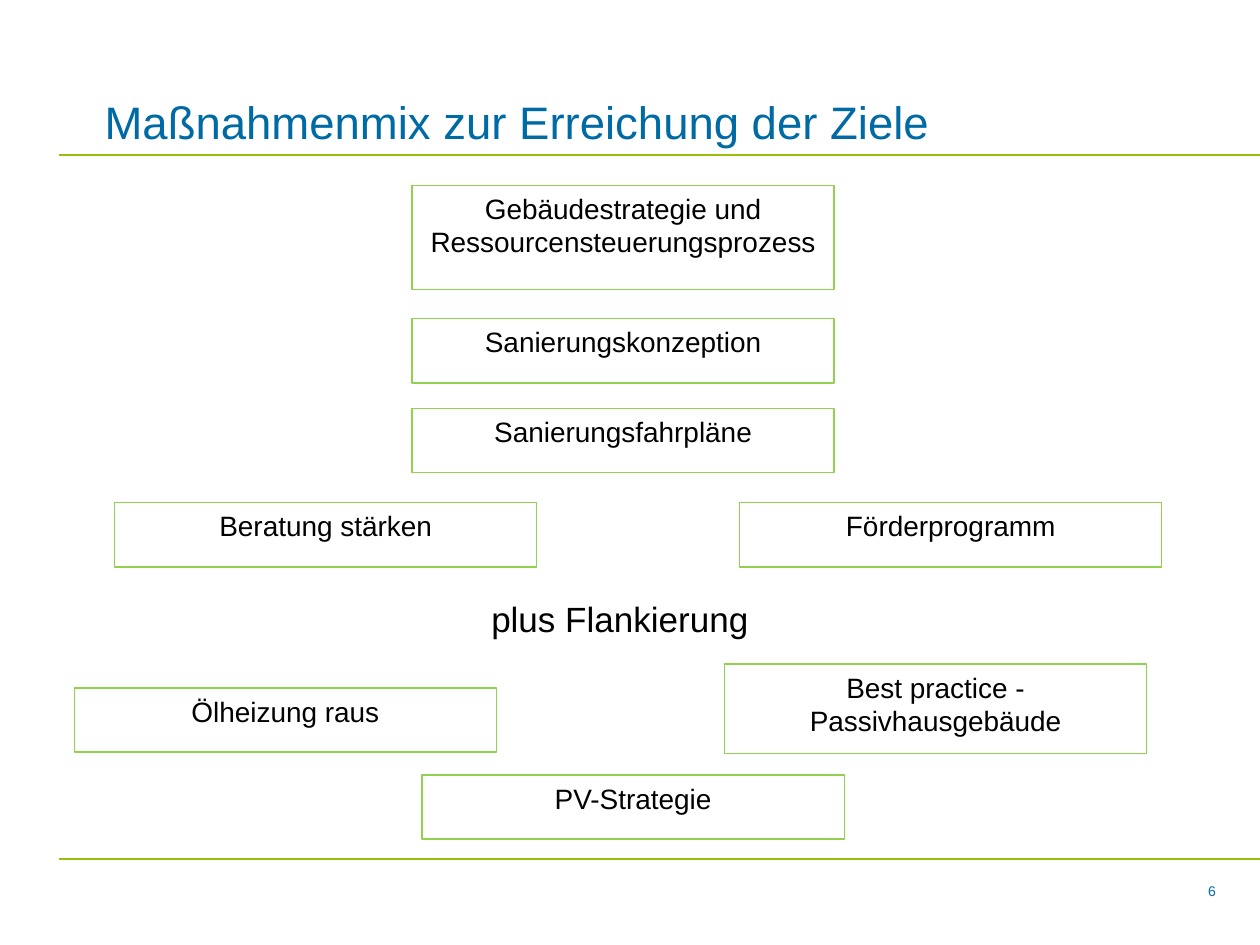
from dataclasses import dataclass

from lxml.etree import SubElement
from pptx import Presentation
from pptx.dml.color import RGBColor
from pptx.enum.shapes import MSO_CONNECTOR, MSO_SHAPE
from pptx.enum.text import MSO_ANCHOR, PP_ALIGN
from pptx.oxml.ns import qn
from pptx.shapes.base import BaseShape
from pptx.slide import Slide
from pptx.util import Inches, Pt

BLUE, GREEN, LIGHT_GREEN, BLACK = "006AA4", "97BF0D", "92D050", "000000"
SLIDE_WIDTH = 10
BOX_WIDTH, BOX_HEIGHT = 3.35, 0.51
CENTER_LEFT = 3.27


@dataclass
class Measure:
    text: str
    left: float
    top: float
    height: float = BOX_HEIGHT


@dataclass
class Label:
    text: str
    left: float
    top: float
    width: float
    height: float
    size: float
    color: str
    alignment: PP_ALIGN
    frame_format: dict
    paragraph_format: dict


BOTTOM_FRAME = {
    "vertical_anchor": MSO_ANCHOR.BOTTOM,
    "margin_left": 0,
    "margin_right": 0,
    "margin_top": 0,
    "margin_bottom": 0,
}

MEASURES = [
    Measure("Gebäudestrategie und Ressourcensteuerungsprozess", CENTER_LEFT, 1.47, 0.83),
    Measure("Sanierungskonzeption", CENTER_LEFT, 2.53),
    Measure("Sanierungsfahrpläne", CENTER_LEFT, 3.24),
    Measure("Beratung stärken", 0.91, 3.99),
    Measure("Förderprogramm", 5.87, 3.99),
    Measure("Ölheizung raus", 0.59, 5.46),
    Measure("Best practice - Passivhausgebäude", 5.75, 5.27, 0.71),
    Measure("PV-Strategie", 3.35, 6.15),
]

LABELS = [
    Label("6", 8.94, 6.98, 0.71, 0.16, 8, BLUE, PP_ALIGN.RIGHT,
          BOTTOM_FRAME, {"line_spacing": Pt(12)}),
    Label("Maßnahmenmix zur Erreichung der Ziele", 0.83, 0.31, 8.82, 0.87, 26, BLUE,
          PP_ALIGN.LEFT, BOTTOM_FRAME, {}),
    Label("plus Flankierung", 3.54, 4.69, 2.76, 0.47, 20, BLACK, PP_ALIGN.CENTER, {}, {}),
]


def color_from(value: str) -> RGBColor:
    return RGBColor.from_string(value)


def apply_format(target: object, values: dict) -> None:
    for name, value in values.items():
        setattr(target, name, value)


def write_text(shape: BaseShape, text: str, size: float, color: str, alignment: PP_ALIGN,
               frame_format: dict, paragraph_format: dict) -> None:
    frame = shape.text_frame
    apply_format(frame, {"word_wrap": True, "vertical_anchor": MSO_ANCHOR.TOP} | frame_format)
    paragraph = frame.paragraphs[0]
    paragraph.text = text
    apply_format(paragraph, {"alignment": alignment} | paragraph_format)
    apply_format(paragraph.font, {"name": "Arial", "size": Pt(size)})
    paragraph.font.color.rgb = color_from(color)


def draw_rule(slide: Slide, top: float) -> None:
    rule = slide.shapes.add_connector(
        MSO_CONNECTOR.STRAIGHT, Inches(0.47), Inches(top), Inches(SLIDE_WIDTH), Inches(top))
    rule.line.color.rgb = color_from(GREEN)
    rule.line.width = Pt(1)
    SubElement(rule._element.spPr, qn("a:effectLst"))


def draw_label(slide: Slide, label: Label) -> None:
    shape = slide.shapes.add_textbox(
        Inches(label.left), Inches(label.top), Inches(label.width), Inches(label.height))
    write_text(shape, label.text, label.size, label.color, label.alignment,
               label.frame_format, label.paragraph_format)


def draw_measure(slide: Slide, measure: Measure) -> None:
    shape = slide.shapes.add_shape(
        MSO_SHAPE.RECTANGLE, Inches(measure.left), Inches(measure.top),
        Inches(BOX_WIDTH), Inches(measure.height))
    shape.shadow.inherit = False
    shape.fill.background()
    shape.line.color.rgb = color_from(LIGHT_GREEN)
    shape.line.width = Pt(0.75)
    write_text(shape, measure.text, 16, BLACK, PP_ALIGN.CENTER, {}, {})


def main() -> None:
    presentation = Presentation()
    apply_format(presentation, {"slide_width": Inches(SLIDE_WIDTH), "slide_height": Inches(7.5)})
    slide = presentation.slides.add_slide(presentation.slide_layouts[6])
    for top in (6.82, 1.23):
        draw_rule(slide, top)
    for measure in MEASURES:
        draw_measure(slide, measure)
    for label in LABELS:
        draw_label(slide, label)
    presentation.save("out.pptx")


if __name__ == "__main__":
    main()
